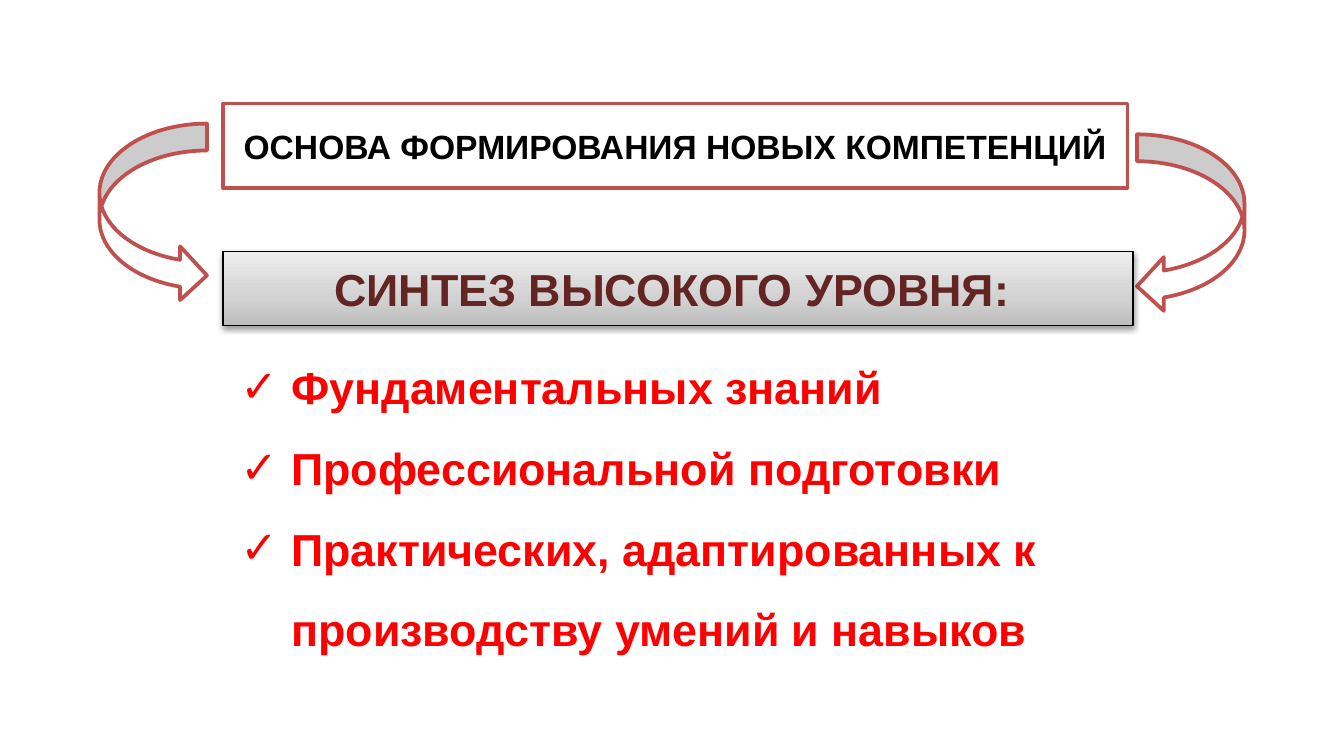
import pptx
import pptx.util
import pptx.oxml
from pptx.dml.color import RGBColor
from pptx.enum.shapes import MSO_SHAPE
from pptx.enum.text import MSO_ANCHOR, MSO_AUTO_SIZE, PP_ALIGN
from pptx.oxml.ns import nsdecls
from pptx.util import Inches

COLORS = {
    "white": "FFFFFF",
    "black": "000000",
    "frame": "C0504D",
    "banner": "632523",
    "list": "FF0000",
}


def rgb(name):
    return RGBColor.from_string(COLORS[name])


def write(frame, lines, size, color, align=PP_ALIGN.CENTER,
          spacing=1.0, bullet=None):
    frame.word_wrap = True
    frame.auto_size = MSO_AUTO_SIZE.NONE
    frame.vertical_anchor = MSO_ANCHOR.MIDDLE
    for i, line in enumerate(lines):
        paragraph = frame.paragraphs[0] if i == 0 else frame.add_paragraph()
        paragraph.alignment = align
        paragraph.line_spacing = spacing
        paragraph.space_before = pptx.util.Pt(0)
        if bullet:
            props = paragraph._p.get_or_add_pPr()
            props.set("marL", str(Inches(0.38)))
            props.set("indent", str(-Inches(0.38)))
            props.append(pptx.oxml.parse_xml(
                f'<a:buFont {nsdecls("a")} typeface="Arial"/>'))
            props.append(pptx.oxml.parse_xml(
                f'<a:buChar {nsdecls("a")} char="{bullet}"/>'))
        run = paragraph.add_run()
        run.text = line
        run.font.name = "Arial"
        run.font.size = pptx.util.Pt(size)
        run.font.bold = True
        run.font.color.rgb = rgb(color)


# Widescreen slide, 16:9
prs = pptx.Presentation()
prs.slide_width = Inches(10)
prs.slide_height = prs.slide_width * 9 // 16
slide = prs.slides.add_slide(prs.slide_layouts[5])

# Framed title
title = slide.shapes.title
title.left, title.top = Inches(1.66), Inches(0.77)
title.width, title.height = Inches(6.73), Inches(0.63)
title.fill.solid()
title.fill.fore_color.rgb = rgb("white")
title.line.color.rgb = rgb("frame")
title.line.width = pptx.util.Pt(2)
write(title.text_frame, ["ОСНОВА ФОРМИРОВАНИЯ НОВЫХ КОМПЕТЕНЦИЙ"], 18, "black")

# Curved arrows from the title to the banner
for kind, left, top in [(MSO_SHAPE.CURVED_RIGHT_ARROW, 0.74, 0.92),
                        (MSO_SHAPE.CURVED_LEFT_ARROW, 8.46, 1)]:
    arrow = slide.shapes.add_shape(
        kind, Inches(left), Inches(top), Inches(0.8), Inches(1.33))
    arrow.shadow.inherit = False
    arrow.fill.solid()
    arrow.fill.fore_color.rgb = rgb("white")
    arrow.line.color.rgb = rgb("frame")
    arrow.line.width = pptx.util.Pt(2)

# Checklist, raised by a deeper bottom margin
checklist = slide.shapes.add_shape(
    MSO_SHAPE.RECTANGLE, Inches(1.69), Inches(2.5), Inches(6.73), Inches(2.76))
checklist.shadow.inherit = False
checklist.fill.solid()
checklist.fill.fore_color.rgb = rgb("white")
checklist.line.fill.background()
checklist.text_frame.margin_top = 0
checklist.text_frame.margin_bottom = Inches(0.4)
write(checklist.text_frame,
      ["Фундаментальных знаний",
       "Профессиональной подготовки",
       "Практических, адаптированных к производству умений и навыков"],
      24, "list", align=PP_ALIGN.LEFT, spacing=1.5, bullet="✓")

# Banner with a grey gradient and a soft shadow
banner = slide.shapes.add_shape(
    MSO_SHAPE.RECTANGLE, Inches(1.66), Inches(1.87), Inches(6.77), Inches(0.55))
banner.line.color.rgb = rgb("black")
banner.line.width = pptx.util.Pt(0.75)
stops = "".join(
    f'<a:gs pos="{percent * 1000}"><a:srgbClr val="{grey}"/></a:gs>'
    for percent, grey in [(0, "BDBDBD"), (35, "D1D1D1"), (100, "EEEEEE")])
banner_props = banner._element.spPr
banner_props.insert(2, pptx.oxml.parse_xml(
    f'<a:gradFill {nsdecls("a")} rotWithShape="1"><a:gsLst>{stops}</a:gsLst>'
    '<a:lin ang="16200000" scaled="0"/></a:gradFill>'))
banner_props.append(pptx.oxml.parse_xml(
    f'<a:effectLst {nsdecls("a")}><a:outerShdw blurRad="{pptx.util.Pt(3.1)}" '
    f'dist="{pptx.util.Pt(1.6)}" dir="5400000" rotWithShape="0">'
    f'<a:srgbClr val="{COLORS["black"]}"><a:alpha val="38000"/></a:srgbClr>'
    '</a:outerShdw></a:effectLst>'))
write(banner.text_frame, ["СИНТЕЗ ВЫСОКОГО УРОВНЯ: "], 24, "banner")

prs.save("out.pptx")
